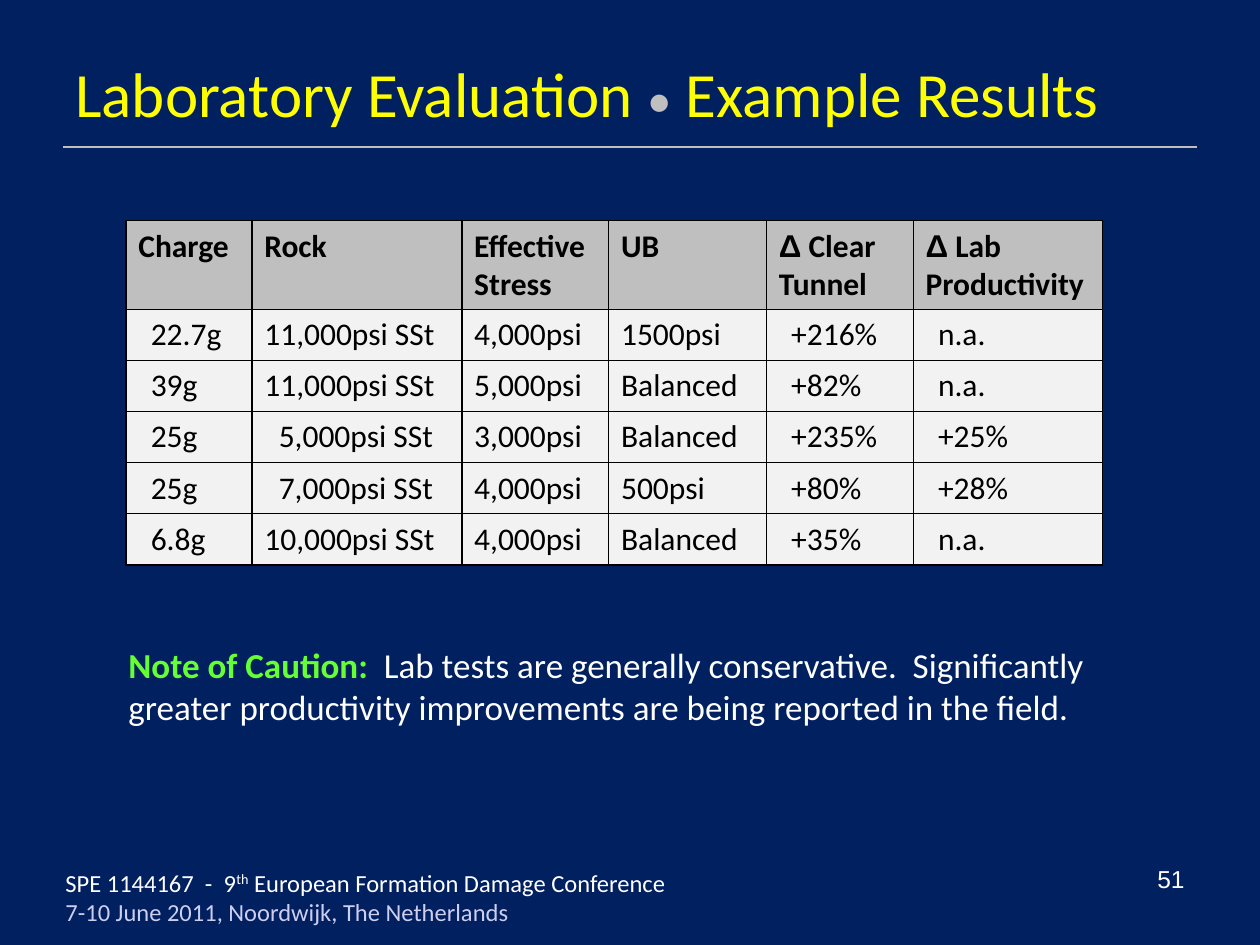
from dataclasses import dataclass

from lxml.etree import SubElement
from pptx import Presentation
from pptx.dml.color import RGBColor
from pptx.enum.shapes import MSO_CONNECTOR
from pptx.enum.text import MSO_ANCHOR, PP_ALIGN
from pptx.oxml.ns import qn
from pptx.slide import Slide
from pptx.table import _Cell
from pptx.text.text import _Paragraph
from pptx.util import Cm, Pt


@dataclass(frozen=True)
class Theme:
    background: str = "002060"
    title: str = "FFFF00"
    rule: str = "BFBFBF"
    white: str = "FFFFFF"
    venue: str = "CECEEF"
    caution: str = "66FF33"
    black: str = "000000"
    header_fill: str = "BFBFBF"
    body_fill: str = "F2F2F2"
    font: str = "Calibri"
    symbol_font: str = "Arial"
    title_size: int = 36
    dot_size: int = 28
    note_size: int = 20
    table_size: int = 18
    footer_size: int = 14


THEME = Theme()


@dataclass(frozen=True)
class TextRun:
    text: str
    size: int
    color: str
    font: str = THEME.font
    bold: bool = False
    superscript: bool = False


@dataclass(frozen=True)
class TextBlock:
    left: float
    top: float
    width: float
    height: float
    paragraphs: list[list[TextRun]]
    anchor: MSO_ANCHOR = MSO_ANCHOR.TOP
    align: PP_ALIGN = PP_ALIGN.LEFT
    wrap: bool = True


@dataclass(frozen=True)
class Column:
    heading: str
    width: float
    indent: float = 0
    symbol: str = ""


def add_runs(paragraph: _Paragraph, runs: list[TextRun]) -> None:
    for item in runs:
        run = paragraph.add_run()
        run.text = item.text
        run.font.name = item.font
        run.font.size = Pt(item.size)
        run.font.bold = item.bold
        run.font.color.rgb = RGBColor.from_string(item.color)
        if item.superscript:
            run._r.get_or_add_rPr().set("baseline", "30000")


def add_text(slide: Slide, block: TextBlock) -> None:
    shape = slide.shapes.add_textbox(
        Cm(block.left), Cm(block.top), Cm(block.width), Cm(block.height))
    frame = shape.text_frame
    frame.word_wrap = block.wrap
    frame.vertical_anchor = block.anchor
    for index, runs in enumerate(block.paragraphs):
        paragraph = frame.add_paragraph() if index else frame.paragraphs[0]
        paragraph.alignment = block.align
        add_runs(paragraph, runs)


def add_rule(slide: Slide, left: float, right: float, top: float) -> None:
    line = slide.shapes.add_connector(
        MSO_CONNECTOR.STRAIGHT, Cm(left), Cm(top), Cm(right), Cm(top))
    line.line.color.rgb = RGBColor.from_string(THEME.rule)
    line.line.width = Pt(1)
    SubElement(line._element.spPr, qn("a:effectLst"))


def style_cell(cell: _Cell, fill: str) -> None:
    properties = cell._tc.get_or_add_tcPr()
    for side in ("a:lnL", "a:lnR", "a:lnT", "a:lnB"):
        border = SubElement(properties, qn(side), w=str(Pt(1)))
        solid = SubElement(border, qn("a:solidFill"))
        SubElement(solid, qn("a:srgbClr"), val=THEME.black)
    cell.fill.solid()
    cell.fill.fore_color.rgb = RGBColor.from_string(fill)
    cell.margin_left = cell.margin_right = Cm(0.25)
    cell.margin_top = cell.margin_bottom = Cm(0.13)


def fill_cell(cell: _Cell, runs: list[TextRun], fill: str, indent: float = 0) -> None:
    style_cell(cell, fill)
    paragraph = cell.text_frame.paragraphs[0]
    if indent:
        paragraph._p.get_or_add_pPr().set("marL", str(Cm(indent)))
    add_runs(paragraph, runs)


def table_run(text: str, bold: bool = False, font: str = THEME.font) -> TextRun:
    return TextRun(text, THEME.table_size, THEME.black, font, bold)


def add_results(slide: Slide, columns: list[Column], rows: list[list[str]]) -> None:
    header_height, row_height = 1.78, 1.03
    width = sum(column.width for column in columns)
    table = slide.shapes.add_table(
        len(rows) + 1, len(columns), Cm(2.54), Cm(4.45), Cm(width),
        Cm(header_height + row_height * len(rows))).table
    table.first_row = table.horz_banding = False
    for index, row in enumerate(table.rows):
        row.height = Cm(row_height if index else header_height)
    for position, column in enumerate(columns):
        table.columns[position].width = Cm(column.width)
        heading = [table_run(column.heading, bold=True)]
        if column.symbol:
            heading.insert(0, table_run(column.symbol, True, THEME.symbol_font))
        fill_cell(table.cell(0, position), heading, THEME.header_fill)
        for number, row in enumerate(rows, start=1):
            text = row[position]
            # Four-digit rock strengths are set in to line up with the others
            short_rock = column.heading == "Rock" and text.index(",") == 1
            indent = 0.29 if short_rock else column.indent
            fill_cell(table.cell(number, position), [table_run(text)],
                      THEME.body_fill, indent)


COLUMNS = [
    Column("Charge", 2.54, 0.25),
    Column("Rock", 4.23),
    Column("Effective Stress", 2.96),
    Column("UB", 3.18),
    Column(" Clear Tunnel", 2.96, 0.25, "Δ"),
    Column(" Lab Productivity", 3.81, 0.25, "Δ"),
]
RESULTS = [
    ["22.7g", "11,000psi SSt", "4,000psi", "1500psi", "+216%", "n.a."],
    ["39g", "11,000psi SSt", "5,000psi", "Balanced", "+82%", "n.a."],
    ["25g", "5,000psi SSt", "3,000psi", "Balanced", "+235%", "+25%"],
    ["25g", "7,000psi SSt", "4,000psi", "500psi", "+80%", "+28%"],
    ["6.8g", "10,000psi SSt", "4,000psi", "Balanced", "+35%", "n.a."],
]
FOOTER = TextBlock(1.07, 17.37, 12.78, 1.45, [
    [TextRun("SPE 1144167  -  9", THEME.footer_size, THEME.white),
     TextRun("th", THEME.footer_size, THEME.white, superscript=True),
     TextRun(" European Formation Damage Conference", THEME.footer_size, THEME.white)],
    [TextRun("7-10 June 2011, Noordwijk, The Netherlands",
             THEME.footer_size, THEME.venue)],
], wrap=False)
TITLE = TextBlock(1.27, 0.76, 22.86, 2.21, [[
    TextRun("Laboratory Evaluation ", THEME.title_size, THEME.title),
    TextRun("•", THEME.dot_size, THEME.rule),
    TextRun(" Example Results", THEME.title_size, THEME.title),
]], anchor=MSO_ANCHOR.MIDDLE)
PAGE_NUMBER = TextBlock(18.21, 17.3, 5.92, 1.32, [[
    TextRun("51", THEME.footer_size, THEME.white, THEME.symbol_font),
]], align=PP_ALIGN.RIGHT)
NOTE = TextBlock(2.34, 12.85, 20.52, 1.96, [[
    TextRun("Note of Caution:", THEME.note_size, THEME.caution, bold=True),
    TextRun("  Lab tests are generally conservative.  Significantly greater "
            "productivity improvements are being reported in the field.",
            THEME.note_size, THEME.white),
]])


def main() -> None:
    presentation = Presentation()
    presentation.slide_width, presentation.slide_height = Cm(25.4), Cm(19.05)
    slide = presentation.slides.add_slide(presentation.slide_layouts[6])
    slide.background.fill.solid()
    slide.background.fill.fore_color.rgb = RGBColor.from_string(THEME.background)

    # Footer, rule and title
    add_text(slide, FOOTER)
    add_rule(slide, 1.27, 24.13, 2.97)
    add_text(slide, TITLE)

    # Results table, page number and note
    add_results(slide, COLUMNS, RESULTS)
    add_text(slide, PAGE_NUMBER)
    add_text(slide, NOTE)
    presentation.save("out.pptx")


if __name__ == "__main__":
    main()
